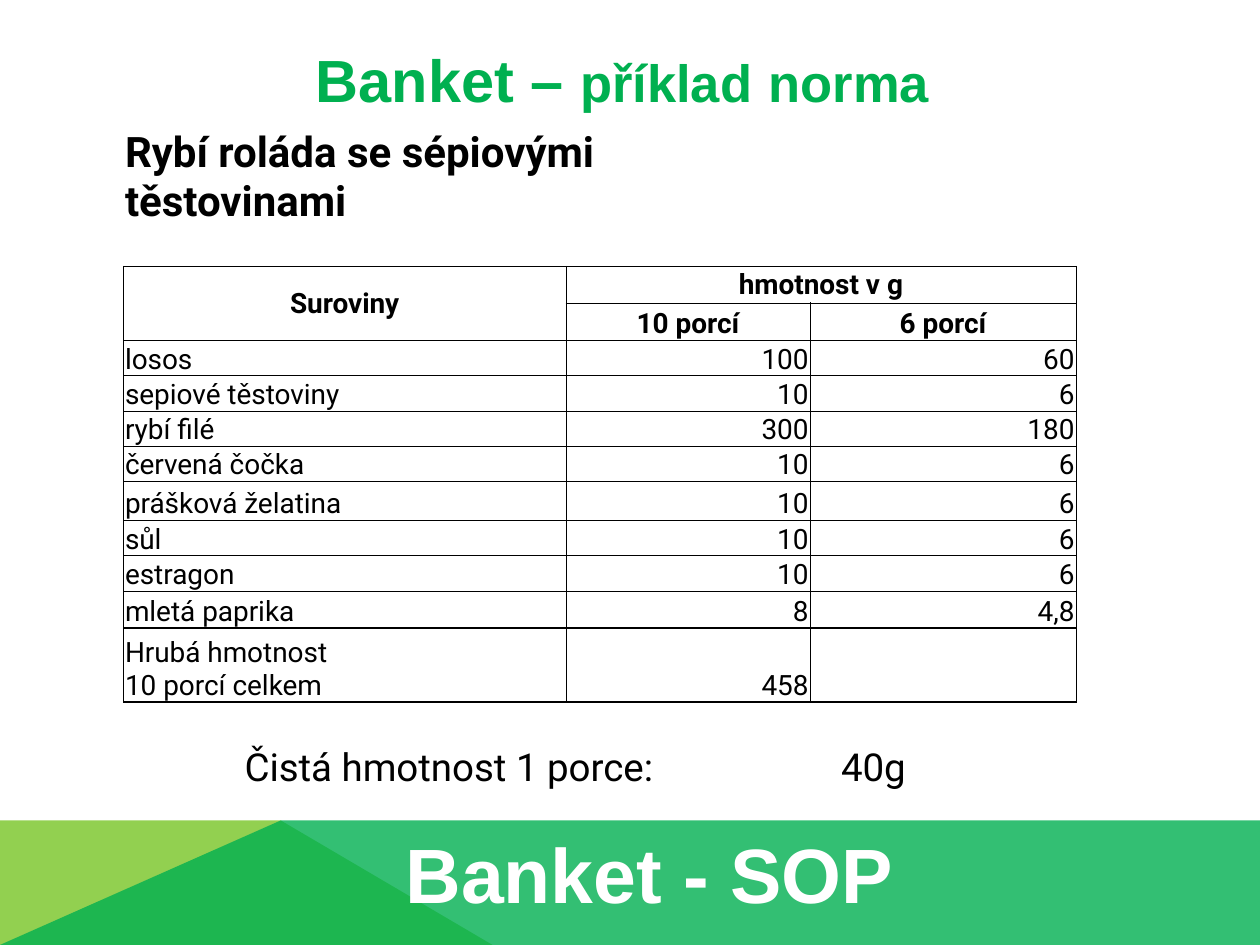
import pptx
import pptx.util
import pptx.dml.color
import pptx.enum.text
import pptx.oxml
import pptx.oxml.ns
import lxml.etree

Cm = pptx.util.Cm
Pt = pptx.util.Pt
RGBColor = pptx.dml.color.RGBColor
Align = pptx.enum.text.PP_ALIGN
Anchor = pptx.enum.text.MSO_ANCHOR
qn = pptx.oxml.ns.qn

BLACK = RGBColor(0, 0, 0)
WHITE = RGBColor(255, 255, 255)
GREEN = RGBColor(0, 0xB0, 0x50)
LIME = RGBColor(0x92, 0xD0, 0x50)


class Deck:
    """Holds the style and the current slide."""

    heading_font = "Arial"
    body_font = "Roboto"
    thin, thick = 0.5, 1

    def __init__(self, width, height):
        self.prs = pptx.Presentation()
        self.prs.slide_width, self.prs.slide_height = Cm(width), Cm(height)
        self.slide = self.prs.slides.add_slide(self.prs.slide_layouts[6])

    def add_run(self, paragraph, text, size, font, color, bold):
        run = paragraph.add_run()
        run.text = text
        run.font.size, run.font.name, run.font.bold = Pt(size), font, bold
        run.font.color.rgb = color

    def polygon(self, points, color, opacity=100):
        corners = [(Cm(x), Cm(y)) for x, y in points]
        builder = self.slide.shapes.build_freeform(*corners[0])
        builder.add_line_segments(corners[1:], close=True)
        shape = builder.convert_to_shape()
        shape.shadow.inherit = False
        shape.fill.solid()
        shape.fill.fore_color.rgb = color
        shape.line.fill.background()
        if opacity < 100:
            tone = shape.fill._xPr.find(".//" + qn("a:srgbClr"))
            lxml.etree.SubElement(tone, qn("a:alpha"), val=str(opacity * 1000))

    def heading(self, left, top, width, height, runs, color):
        box = self.slide.shapes.add_textbox(Cm(left), Cm(top), Cm(width), Cm(height))
        frame = box.text_frame
        frame.word_wrap = True
        frame.auto_size = pptx.enum.text.MSO_AUTO_SIZE.SHAPE_TO_FIT_TEXT
        paragraph = frame.paragraphs[0]
        paragraph.alignment = Align.CENTER
        for text, size in runs:
            self.add_run(paragraph, text, size, self.heading_font, color, True)

    def table(self, left, top, columns, rows):
        frame = self.slide.shapes.add_table(
            len(rows), len(columns), Cm(left), Cm(top), Cm(sum(columns)), Cm(sum(rows)))
        table = frame.table
        table.first_row = table.horz_banding = False
        for column, width in zip(table.columns, columns):
            column.width = Cm(width)
        for row, height in zip(table.rows, rows):
            row.height = Cm(height)
        return table

    def cell(self, cell, text="", size=16, bold=False, align=Align.LEFT,
             anchor=Anchor.BOTTOM, borders=(0, 0, 0, 0)):
        """Borders are widths in points: left, right, top, bottom."""
        cell.margin_left = cell.margin_right = cell.margin_top = Cm(0.03)
        cell.margin_bottom = 0
        cell.vertical_anchor = anchor
        properties = cell._tc.get_or_add_tcPr()
        for side, width in zip("LRTB", borders):
            line = lxml.etree.SubElement(properties, qn("a:ln" + side), w=str(Pt(width)))
            if width:
                fill = lxml.etree.SubElement(line, qn("a:solidFill"))
                lxml.etree.SubElement(fill, qn("a:srgbClr"), val=str(BLACK))
            else:
                lxml.etree.SubElement(line, qn("a:noFill"))
        cell.fill.background()
        paragraph = cell.text_frame.paragraphs[0]
        paragraph.alignment = align
        for number, line_text in enumerate(text.split("\n") if text else []):
            if number:
                paragraph.add_line_break()
            self.add_run(paragraph, line_text, size, self.body_font, BLACK, bold)


INGREDIENTS = [
    ("losos", "100", "60"),
    ("sepiové těstoviny", "10", "6"),
    ("rybí filé", "300", "180"),
    ("červená čočka", "10", "6"),
    ("prášková želatina", "10", "6"),
    ("sůl", "10", "6"),
    ("estragon", "10", "6"),
    ("mletá paprika", "8", "4,8"),
    ("Hrubá hmotnost\n10 porcí celkem", "458", ""),
]


def build_recipe(deck):
    recipe = deck.table(2.49, 2.51, [8.92, 4.92, 5.36],
                        [1.8, 0.69, 0.74, 0.76] + [0.71] * 4 + [0.79, 0.71, 0.71, 0.74, 1.5])
    headers = [
        ("Rybí roláda se sépiovými těstovinami", "", ""),
        ("", "", ""),
        ("Suroviny", "hmotnost v g", ""),
        ("", "10 porcí", "6 porcí"),
    ]
    header_end, last = len(headers) - 1, len(headers) + len(INGREDIENTS) - 1
    thick_below = {header_end, last - 1, last}

    def rule_below(row):
        if row < 1:
            return 0
        return deck.thick if row in thick_below else deck.thin

    for row, texts in enumerate(headers + INGREDIENTS):
        side = deck.thin if row > 1 else 0
        for column, text in enumerate(texts):
            if 2 <= row <= header_end:
                align = Align.CENTER
            else:
                align = Align.RIGHT if column else Align.LEFT
            top, bottom = rule_below(row - 1), rule_below(row)
            if row == 2 and column == 0:
                bottom = deck.thick  # spans both header rows
            deck.cell(recipe.cell(row, column), text, size=24 if row == 0 else 16,
                      bold=row <= header_end, align=align,
                      anchor=Anchor.MIDDLE if row == 2 else Anchor.BOTTOM,
                      borders=(side, side, top, bottom))

    for first, final in [((0, 0), (0, 1)), ((2, 0), (3, 0)), ((2, 1), (2, 2))]:
        recipe.cell(*first).merge(recipe.cell(*final))


def main():
    deck = Deck(25.4, 19.05)

    # Footer band
    band_top, bottom, peak = 16.54, 19.05, 5.66
    deck.polygon([(0, bottom), (0, band_top), (peak, band_top), (9.93, bottom)], LIME)
    deck.polygon([(0, bottom), (peak, band_top), (25.4, band_top), (25.4, bottom)], GREEN, 80)
    deck.heading(3.1, band_top, 19.99, 2.13, [("Banket - SOP", 44)], WHITE)

    # Title
    deck.heading(1.3, 0.74, 22.5, 1.7,
                 [("Banket – ", 34), ("příklad", 30), (" ", 34), ("norma", 30)], GREEN)

    # Recipe and net weight
    build_recipe(deck)
    net_weight = deck.table(4.9, 14.53, [8.61, 4.78], [1.42])
    deck.cell(net_weight.cell(0, 0), "Čistá hmotnost 1 porce:", size=22)
    deck.cell(net_weight.cell(0, 1), "40g", size=22, align=Align.RIGHT)

    deck.prs.save("out.pptx")


if __name__ == "__main__":
    main()
